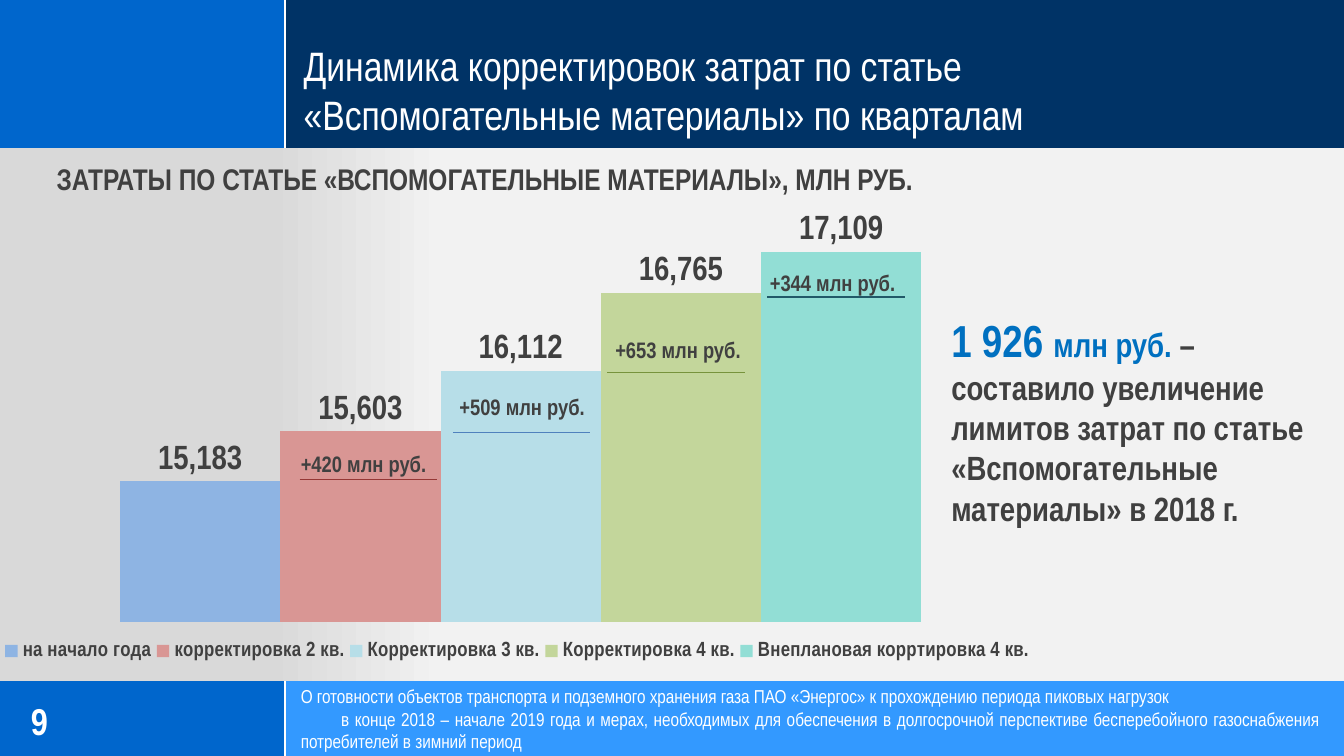
import pptx
import pptx.chart.data
import pptx.dml.color
import pptx.enum.chart
import pptx.enum.shapes
import pptx.enum.text
import pptx.oxml
import pptx.oxml.ns
import pptx.util

Inches = pptx.util.Inches
Align = pptx.enum.text.PP_ALIGN
Anchor = pptx.enum.text.MSO_ANCHOR

# Content
TITLE = ["Динамика корректировок затрат по статье",
         "«Вспомогательные материалы» по кварталам"]
CHART_HEADING = "ЗАТРАТЫ ПО СТАТЬЕ «ВСПОМОГАТЕЛЬНЫЕ МАТЕРИАЛЫ», МЛН РУБ."
COSTS = [
    ("на начало года", 15183, "8EB4E3"),
    ("корректировка 2 кв.", 15603, "D99694"),
    ("Корректировка 3 кв.", 16112, "B7DEE8"),
    ("Корректировка 4 кв.", 16765, "C3D69B"),
    ("Внеплановая корртировка 4 кв.", 17109, "92DED5"),
]
# Increase, label left and top, underline left and top, underline colour
INCREASES = [
    ("+420 млн руб.", 2.14, 3.3, 2.23, 3.57, "953735"),
    ("+509 млн руб.", 3.32, 2.88, 3.37, 3.22, "4F81BD"),
    ("+653 млн руб.", 4.48, 2.45, 4.52, 2.77, "77933C"),
    ("+344 млн руб.", 5.63, 1.95, 5.71, 2.21, "215968"),
]
SUMMARY = [
    ("1 926 ", "total", "accent"),
    ("млн руб.", "summary", "accent"),
    (" – составило увеличение лимитов затрат по статье "
     "«Вспомогательные материалы» в 2018 г.", "summary", "text"),
]
FOOTER = [
    "О готовности объектов транспорта и подземного хранения газа ПАО «Энергос» "
    "к прохождению периода пиковых нагрузок",
    "в конце 2018 – начале 2019 года и мерах, необходимых для обеспечения в "
    "долгосрочной перспективе бесперебойного газоснабжения потребителей в зимний период",
]
PAGE_NUMBER = "9"

THEME = {
    "font": "Arial Narrow",
    "colors": {"navy": "003366", "blue": "0066CC", "sky": "3399FF",
               "white": "FFFFFF", "text": "404040", "accent": "0070C0"},
    "sizes": {"title": 22, "heading": 16, "value": 18, "increase": 12, "total": 24,
              "summary": 18, "legend": 11, "footer": 10, "page": 20},
    "backdrop": [(0, "BFBFBF"), (20, "D1D1D1"), (100, "F2F2F2")],
    "panel": [(20, "D9D9D9"), (33, "F2F2F2"), (65, "F2F2F2")],
}
SLIDE_W = 10
SLIDE_H = SLIDE_W * 9 / 16
SIDE_W, HEAD_H, FOOT_TOP, FOOT_H = 2.12, 1.18, 5.06, 0.59
CHART_H, PLOT_W, PLOT_TOP, PLOT_H = 3.91, 7.75, 0.38, 3.1
UNDERLINE_W = 1.02


def rgb(color):
    return pptx.dml.color.RGBColor.from_string(THEME["colors"].get(color, color))


def apply(target, values):
    for key, value in values.items():
        setattr(target, key, value)


def style_font(font, size, color, bold=True):
    apply(font, {"name": THEME["font"], "bold": bold,
                 "size": pptx.util.Pt(THEME["sizes"][size])})
    font.color.rgb = rgb(color)


def set_gradient(fill, root, stops):
    fill.gradient()
    fill.gradient_angle = 0
    stop_list = next(root.iter(pptx.oxml.ns.qn("a:gsLst")))
    for old in list(stop_list):
        stop_list.remove(old)
    for percent, color in stops:
        stop_list.append(pptx.oxml.parse_xml(
            f'<a:gs {pptx.oxml.ns.nsdecls("a")} pos="{percent * 1000}">'
            f'<a:srgbClr val="{color}"/></a:gs>'))


def add_band(slide, box, color=None):
    band = slide.shapes.add_shape(pptx.enum.shapes.MSO_SHAPE.RECTANGLE,
                                  *map(Inches, box))
    band.shadow.inherit = False
    band.line.fill.background()
    if color:
        band.fill.solid()
        band.fill.fore_color.rgb = rgb(color)
    return band


def add_line(slide, ends, color, width):
    line = slide.shapes.add_connector(pptx.enum.shapes.MSO_CONNECTOR.STRAIGHT,
                                      *map(Inches, ends))
    line.line.color.rgb = rgb(color)
    line.line.width = pptx.util.Pt(width)
    properties = line.element.find(pptx.oxml.ns.qn("p:spPr"))
    properties.append(pptx.oxml.parse_xml(
        f'<a:effectLst {pptx.oxml.ns.nsdecls("a")}/>'))


def fill_text(frame, paragraphs, align=Align.LEFT, bold=True):
    """Each paragraph is a list of (text, size, color) runs."""
    apply(frame, {"word_wrap": True, "auto_size": pptx.enum.text.MSO_AUTO_SIZE.NONE})
    for index, runs in enumerate(paragraphs):
        paragraph = frame.paragraphs[0] if index == 0 else frame.add_paragraph()
        paragraph.alignment = align
        for text, size, color in runs:
            run = paragraph.add_run()
            run.text = text
            style_font(run.font, size, color, bold)


def add_text(slide, box, paragraphs, **options):
    frame = slide.shapes.add_textbox(*map(Inches, box)).text_frame
    fill_text(frame, paragraphs, **options)
    return frame


def add_layout(parent, successor_tag, values):
    """Give a chart part a fixed place, as fractions of the chart."""
    for old in parent.findall(pptx.oxml.ns.qn("c:layout")):
        parent.remove(old)
    marks = "".join(f'<c:{key} val="{value}"/>' for key, value in values)
    layout = pptx.oxml.parse_xml(
        f'<c:layout {pptx.oxml.ns.nsdecls("c")}><c:manualLayout>{marks}'
        "</c:manualLayout></c:layout>")
    parent.find(pptx.oxml.ns.qn(successor_tag)).addprevious(layout)


def add_cost_chart(slide):
    data = pptx.chart.data.CategoryChartData(number_format="#,##0")
    data.categories = ["1"]
    for name, value, _ in COSTS:
        data.add_series(name, [value])
    chart = slide.shapes.add_chart(
        pptx.enum.chart.XL_CHART_TYPE.COLUMN_CLUSTERED,
        *map(Inches, (0, 1.15, SLIDE_W, CHART_H)), data).chart
    apply(chart, {"has_title": False, "has_legend": True})
    style_font(chart.font, "legend", "text")
    apply(chart.value_axis, {"minimum_scale": 14000, "maximum_scale": 17500,
                             "has_major_gridlines": False, "visible": False})
    chart.category_axis.visible = False
    plot = chart.plots[0]
    apply(plot, {"gap_width": 150, "overlap": 0, "vary_by_categories": False})
    for series, (_, _, color) in zip(plot.series, COSTS):
        series.format.fill.solid()
        series.format.fill.fore_color.rgb = rgb(color)
        labels = series.data_labels
        apply(labels, {"show_value": True, "number_format": "#,##0",
                       "number_format_is_linked": False,
                       "position": pptx.enum.chart.XL_LABEL_POSITION.OUTSIDE_END})
        style_font(labels.font, "value", "text")
    apply(chart.legend, {"position": pptx.enum.chart.XL_LEGEND_POSITION.BOTTOM,
                         "include_in_layout": False})
    style_font(chart.legend.font, "legend", "text")
    edges = [("xMode", "edge"), ("yMode", "edge")]
    add_layout(chart.legend._element, "c:overlay",
               edges + [("x", 0), ("y", 0.91), ("w", 0.77), ("h", 0.07)])
    plot_area = next(chart.element.iter(pptx.oxml.ns.qn("c:plotArea")))
    add_layout(plot_area, "c:barChart", [("layoutTarget", "inner")] + edges
               + [("x", 0), ("y", PLOT_TOP / CHART_H),
                  ("w", PLOT_W / SLIDE_W), ("h", PLOT_H / CHART_H)])


def main():
    deck = pptx.Presentation()
    apply(deck, {"slide_width": Inches(SLIDE_W), "slide_height": Inches(SLIDE_H)})
    slide = deck.slides.add_slide(deck.slide_layouts[5])
    set_gradient(slide.background.fill, slide.element, THEME["backdrop"])

    # Header and footer bands with their dividers
    for top, height, color in [(0, HEAD_H, "navy"), (FOOT_TOP, FOOT_H, "sky")]:
        add_band(slide, (0, top, SIDE_W, height), "blue")
        add_band(slide, (SIDE_W, top, SLIDE_W - SIDE_W, height), color)
        add_line(slide, (SIDE_W, top, SIDE_W, top + height), "white", 1.25)
    for y in (HEAD_H, 5.05):
        add_line(slide, (0, y, SLIDE_W, y), "white", 1.25)
    panel = add_band(slide, (0, 1.1, SLIDE_W, 3.97))
    set_gradient(panel.fill, panel.element, THEME["panel"])

    # Title, brought in front of the header band
    title = slide.shapes.title
    apply(title, dict(zip(("left", "top", "width", "height"),
                          map(Inches, (2.16, 0.25, 7.76, 0.84)))))
    title.text_frame.vertical_anchor = Anchor.TOP
    fill_text(title.text_frame, [[(line, "title", "white")] for line in TITLE],
              bold=False)
    title.element.getparent().append(title.element)

    # Chart, its heading and the quarterly increases
    add_cost_chart(slide)
    add_text(slide, (0.08, 1.15, 7.06, 0.47), [[(CHART_HEADING, "heading", "text")]],
             align=Align.CENTER)
    for text, left, top, line_x, line_y, color in INCREASES:
        add_line(slide, (line_x, line_y, line_x + UNDERLINE_W, line_y), color, 0.75)
        add_text(slide, (left, top, 1.16, 0.27), [[(text, "increase", "text")]])

    # Summary, footer and page number
    add_text(slide, (6.98, 2.28, 2.94, 1.74), [SUMMARY])
    footer = add_text(slide, (2.14, 5.05, 7.77, 0.61),
                      [[(line, "footer", "white")] for line in FOOTER],
                      align=Align.JUSTIFY, bold=False)
    footer.paragraphs[1]._p.get_or_add_pPr().set("indent", str(Inches(0.3)))
    page = add_text(slide, (0.23, 5.1, 1.62, 0.52), [[(PAGE_NUMBER, "page", "white")]])
    apply(page, {"vertical_anchor": Anchor.MIDDLE, "margin_left": 0, "margin_right": 0,
                 "margin_top": 0, "margin_bottom": 0})
    deck.save("out.pptx")


if __name__ == "__main__":
    main()
